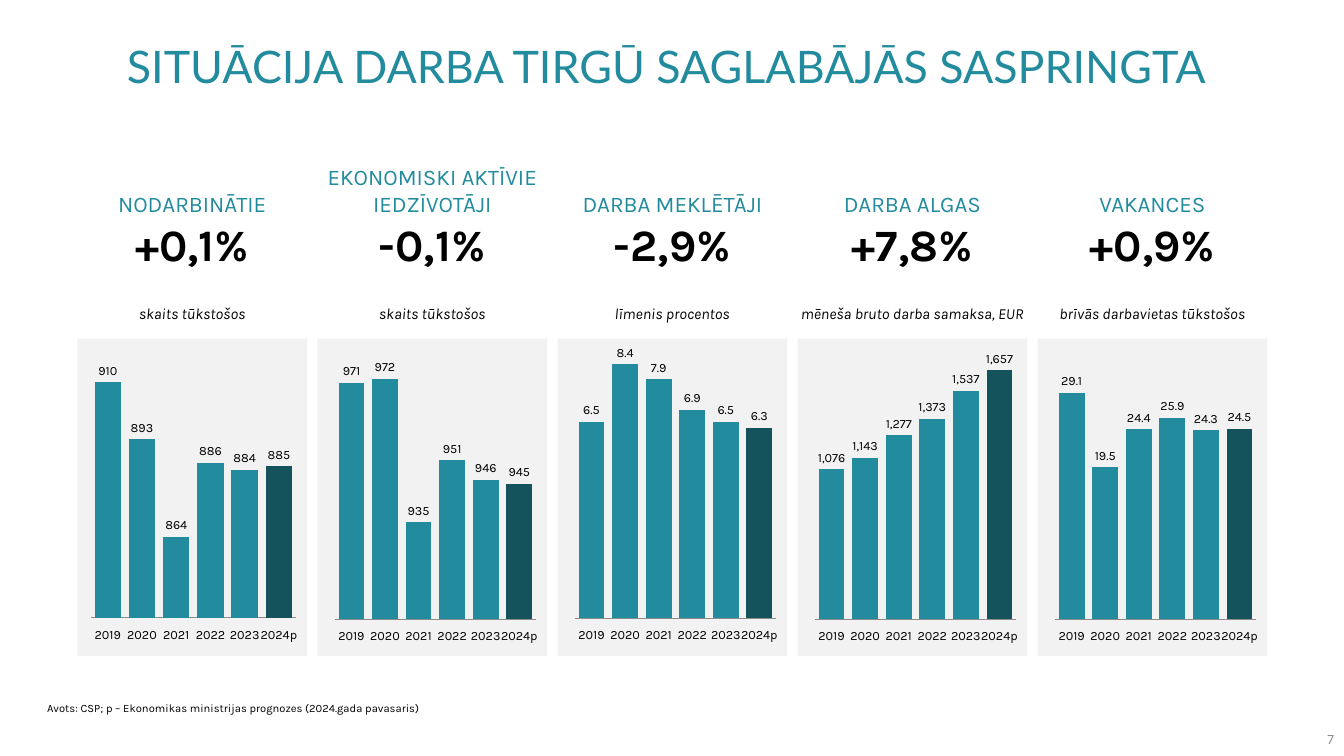
from dataclasses import dataclass

from pptx import Presentation
from pptx.chart.data import CategoryChartData
from pptx.dml.color import RGBColor
from pptx.enum.chart import XL_CHART_TYPE as ChartType
from pptx.enum.chart import XL_LABEL_POSITION as LabelPos
from pptx.enum.chart import XL_TICK_LABEL_POSITION as TickLabelPos
from pptx.enum.chart import XL_TICK_MARK as TickMark
from pptx.enum.text import MSO_ANCHOR as Anchor
from pptx.enum.text import PP_ALIGN as Align
from pptx.oxml import parse_xml
from pptx.oxml.ns import nsdecls
from pptx.slide import Slide
from pptx.util import Cm, Pt

TEAL, DARK_TEAL = "228B9D", "14525C"
BLACK, GREY, PANEL = "000000", "8C8C8C", "F2F2F2"
YEARS = ["2019", "2020", "2021", "2022", "2023", "2024p"]
LEFT, PITCH, WIDTH = 1.95, 6.05, 5.79


@dataclass(frozen=True)
class Indicator:
    heading: str
    change: str
    unit: str
    values: tuple[float, ...]
    axis_min: float
    axis_max: float
    layout: tuple[float, float, float, float]  # inner plot: x, y, width, height
    label_format: str = "#,##0"
    unit_width: float = WIDTH


INDICATORS = [
    Indicator("NODARBINĀTIE", "+0,1%", "skaits tūkstošos",
              (910, 893, 864, 886, 884, 885), 840, 920,
              (0.058, 0.032, 0.894, 0.848)),
    Indicator("EKONOMISKI AKTĪVIE IEDZĪVOTĀJI", "-0,1%", "skaits tūkstošos",
              (971, 972, 935, 951, 946, 945), 910, 980,
              (0.075, 0.03, 0.877, 0.855)),
    Indicator("DARBA MEKLĒTĀJI", "-2,9%", "līmenis procentos",
              (6.5, 8.4, 7.9, 6.9, 6.5, 6.3), 0, 9,
              (0.075, 0.024, 0.877, 0.857), "#,##0.0"),
    Indicator("DARBA ALGAS", "+7,8%", "mēneša bruto darba samaksa, EUR",
              (1076, 1143, 1277, 1373, 1537, 1657), 200, 1800,
              (0.075, 0.023, 0.877, 0.861), unit_width=6.4),
    Indicator("VAKANCES", "+0,9%", "brīvās darbavietas tūkstošos",
              (29.1, 19.5, 24.4, 25.9, 24.3, 24.5), 0, 35,
              (0.075, 0.026, 0.877, 0.859), "#,##0.0"),
]


def rgb(color: str) -> RGBColor:
    return RGBColor.from_string(color)


def add_text(s: Slide, text: str, x: float, y: float, w: float, h: float, *,
             size: float, font: str = "Karla", color: str = BLACK,
             italic: bool = False, align: Align = Align.LEFT,
             anchor: Anchor = Anchor.TOP, spacing: float = 1.0,
             big_line: str = ""):
    """Add a text box; big_line is an optional bold second paragraph."""
    tf = s.shapes.add_textbox(Cm(x), Cm(y), Cm(w), Cm(h)).text_frame
    tf.word_wrap = True
    tf.vertical_anchor = anchor
    lines = [(text, size, color, False)]
    if big_line:
        lines.append((big_line, 32, BLACK, True))
    for i, (line, line_size, line_color, bold) in enumerate(lines):
        p = tf.add_paragraph() if i else tf.paragraphs[0]
        p.alignment = align
        p.line_spacing = spacing
        r = p.add_run()
        r.text = line
        r.font.name = font
        r.font.size = Pt(line_size)
        r.font.bold = bold
        r.font.italic = italic
        r.font.color.rgb = rgb(line_color)


def style_panel(chart, layout: tuple[float, float, float, float]) -> None:
    """Fill the chart and plot backgrounds and fix the inner plot area."""
    fill = (f'<c:spPr {nsdecls("c", "a")}><a:solidFill><a:srgbClr val="{PANEL}"/>'
            '</a:solidFill><a:ln><a:noFill/></a:ln></c:spPr>')
    sides = "".join(f'<c:{tag} val="{value}"/>'
                    for tag, value in zip("xywh", layout))
    root = chart.element
    body = root.find("{*}chart")
    body.addnext(parse_xml(fill))
    area = body.find("{*}plotArea")
    for old in area.findall("{*}layout"):
        area.remove(old)
    area.insert(0, parse_xml(
        f'<c:layout {nsdecls("c")}><c:manualLayout><c:layoutTarget val="inner"/>'
        f'<c:xMode val="edge"/><c:yMode val="edge"/>{sides}'
        '</c:manualLayout></c:layout>'))
    area.append(parse_xml(fill))


def add_bar_chart(s: Slide, item: Indicator, x: float) -> None:
    data = CategoryChartData()
    data.categories = YEARS
    data.add_series("Series 1", item.values)
    chart = s.shapes.add_chart(ChartType.COLUMN_CLUSTERED, Cm(x), Cm(8.53),
                               Cm(WIDTH), Cm(8), data).chart
    chart.has_legend = False
    chart.has_title = False
    chart.font.name = "Karla"
    chart.font.size = Pt(9)
    chart.font.color.rgb = rgb(BLACK)

    years = chart.category_axis
    years.major_tick_mark = TickMark.NONE
    years.tick_label_position = TickLabelPos.LOW
    years.format.line.color.rgb = rgb(GREY)
    scale = chart.value_axis
    scale.minimum_scale = item.axis_min
    scale.maximum_scale = item.axis_max
    scale.has_major_gridlines = False
    scale.visible = False

    plot = chart.plots[0]
    plot.gap_width = 30
    plot.vary_by_categories = False
    plot.has_data_labels = True
    labels = plot.data_labels
    labels.show_value = True
    labels.position = LabelPos.OUTSIDE_END
    labels.number_format = item.label_format
    labels.number_format_is_linked = False

    bars = plot.series[0]
    forecast = bars.points[len(YEARS) - 1]
    for part, color in ((bars, TEAL), (forecast, DARK_TEAL)):
        part.format.fill.solid()
        part.format.fill.fore_color.rgb = rgb(color)
    style_panel(chart, item.layout)


def main() -> None:
    prs = Presentation()
    prs.slide_width, prs.slide_height = Cm(33.87), Cm(19.05)
    s = prs.slides.add_slide(prs.slide_layouts[6])

    add_text(s, "SITUĀCIJA DARBA TIRGŪ SAGLABĀJĀS SASPRINGTA",
             2.95, 0.94, 28, 1.6, size=32, font="Lato", color=TEAL,
             anchor=Anchor.MIDDLE, spacing=0.9)
    for i, item in enumerate(INDICATORS):
        x = LEFT + i * PITCH
        add_bar_chart(s, item, x)
        add_text(s, item.heading, x, 3.95, WIDTH, 3, size=16, color=TEAL,
                 align=Align.CENTER, anchor=Anchor.BOTTOM, big_line=item.change)
        add_text(s, item.unit, x - (item.unit_width - WIDTH) / 2, 7.54,
                 item.unit_width, 0.74, size=11, italic=True, align=Align.CENTER)
    add_text(s, "Avots: CSP; p – Ekonomikas ministrijas prognozes (2024.gada pavasaris)",
             0.94, 17.55, 11.6, 0.6, size=8)
    add_text(s, "7", 31.52, 18.19, 2.35, 0.84, size=10, font="Calibri",
             color=GREY, align=Align.RIGHT, anchor=Anchor.MIDDLE)

    prs.save("out.pptx")


if __name__ == "__main__":
    main()
